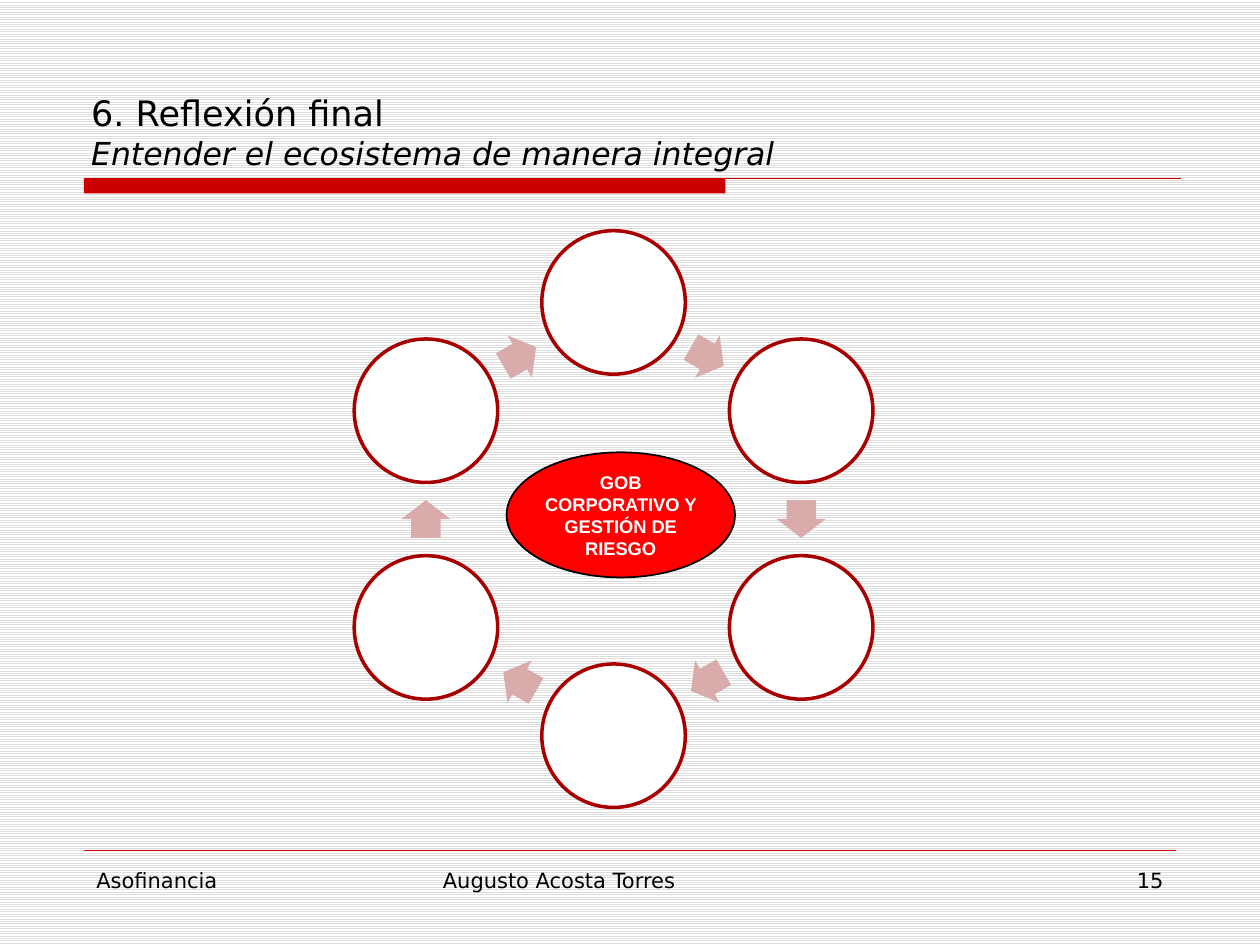
from math import cos, radians, sin

from lxml.etree import SubElement
from pptx import Presentation
from pptx.dml.color import RGBColor
from pptx.enum.dml import MSO_PATTERN
from pptx.enum.shapes import MSO_CONNECTOR, MSO_SHAPE
from pptx.enum.text import MSO_ANCHOR, PP_ALIGN
from pptx.oxml.ns import qn
from pptx.util import Pt

COLORS = {
    "white": "FFFFFF",
    "black": "000000",
    "stripe": "DDDDDD",
    "rule": "CC0000",
    "ring": "A80000",
    "arrow": "D9ABAB",
    "core": "FF0000",
}
CYCLE_CENTER = (350.6, 296.6)
CYCLE_RADIUS = 123.8
NODE_SIZE = 82
NODE_COUNT = 6


def color(name):
    return RGBColor.from_string(COLORS[name])


def paint_background(page):
    fill = page.background.fill
    fill.patterned()
    fill.pattern = MSO_PATTERN.LIGHT_HORIZONTAL
    fill.fore_color.rgb = color("stripe")
    fill.back_color.rgb = color("white")


def add_span(para, text, size=12, font="DejaVu Sans", ink="black", bold=False, italic=False):
    span = para.add_run()
    span.text = text
    span.font.size = Pt(size)
    span.font.name = font
    span.font.bold = bold
    span.font.italic = italic
    span.font.color.rgb = color(ink)


def add_text_box(page, left, top, width, height, align=PP_ALIGN.LEFT, anchor=MSO_ANCHOR.TOP):
    """Add an empty wrapping text box and return its first paragraph."""
    box = page.shapes.add_textbox(Pt(left), Pt(top), Pt(width), Pt(height))
    box.text_frame.word_wrap = True
    box.text_frame.vertical_anchor = anchor
    para = box.text_frame.paragraphs[0]
    para.alignment = align
    return para


def add_filled_shape(page, kind, left, top, width, height, fill, line=None, weight=1):
    shape = page.shapes.add_shape(kind, Pt(left), Pt(top), Pt(width), Pt(height))
    shape.shadow.inherit = False
    shape.fill.solid()
    shape.fill.fore_color.rgb = color(fill)
    if line:
        shape.line.color.rgb = color(line)
        shape.line.width = Pt(weight)
    else:
        shape.line.fill.background()
    return shape


def add_rule(page, left, right, y, weight):
    rule = page.shapes.add_connector(MSO_CONNECTOR.STRAIGHT, Pt(left), Pt(y), Pt(right), Pt(y))
    rule.line.color.rgb = color("rule")
    rule.line.width = Pt(weight)
    SubElement(rule.element.spPr, qn("a:effectLst"))


def add_title(page):
    para = add_text_box(page, 45, 6, 630, 95.5, anchor=MSO_ANCHOR.BOTTOM)
    add_span(para, "6. Reflexión final", size=20)
    para.add_line_break()
    add_span(para, "Entender el ecosistema de manera integral", size=18, italic=True)
    add_filled_shape(page, MSO_SHAPE.RECTANGLE, 48, 102, 366.5, 8.6, "rule")
    add_rule(page, 48, 674.8, 102, 0.75)


def add_footer(page):
    add_rule(page, 48, 672, 486, 0.25)
    for text, left, width, align in (
        ("Asofinancia", 48, 171, PP_ALIGN.LEFT),
        ("Augusto Acosta Torres", 246, 228, PP_ALIGN.LEFT),
        ("15", 516, 156, PP_ALIGN.RIGHT),
    ):
        add_span(add_text_box(page, left, 492, width, 37.5, align), text)


def cycle_point(angle, radius):
    """Point on the cycle, with the angle clockwise from the top."""
    x, y = CYCLE_CENTER
    return x + radius * sin(radians(angle)), y - radius * cos(radians(angle))


def add_cycle(page):
    step = 360 / NODE_COUNT
    arrow_radius = CYCLE_RADIUS * cos(radians(step / 2))
    arrow_width, arrow_height = 21.6, 28
    for index in range(NODE_COUNT):
        angle = index * step
        x, y = cycle_point(angle, CYCLE_RADIUS)
        add_filled_shape(page, MSO_SHAPE.OVAL, x - NODE_SIZE / 2, y - NODE_SIZE / 2,
                         NODE_SIZE, NODE_SIZE, "white", "ring", 2)
        x, y = cycle_point(angle + step / 2, arrow_radius)
        arrow = add_filled_shape(page, MSO_SHAPE.RIGHT_ARROW, x - arrow_width / 2,
                                 y - arrow_height / 2, arrow_width, arrow_height, "arrow")
        arrow.adjustments[0] = 0.6
        arrow.adjustments[1] = 0.5
        arrow.rotation = angle + step / 2


def add_core(page):
    core = add_filled_shape(page, MSO_SHAPE.OVAL, 289.5, 258.5, 130.5, 71.5, "core", "black")
    frame = core.text_frame
    frame.word_wrap = True
    frame.vertical_anchor = MSO_ANCHOR.MIDDLE
    frame.margin_left = frame.margin_right = frame.margin_top = frame.margin_bottom = 0
    para = frame.paragraphs[0]
    para.alignment = PP_ALIGN.CENTER
    add_span(para, "GOB CORPORATIVO Y GESTIÓN DE RIESGO",
             size=10.5, font="Arial", ink="white", bold=True)


def main():
    deck = Presentation()
    deck.slide_width, deck.slide_height = Pt(720), Pt(540)
    page = deck.slides.add_slide(deck.slide_layouts[6])
    paint_background(page)
    add_title(page)
    add_footer(page)
    add_cycle(page)
    add_core(page)
    deck.save("out.pptx")


if __name__ == "__main__":
    main()
